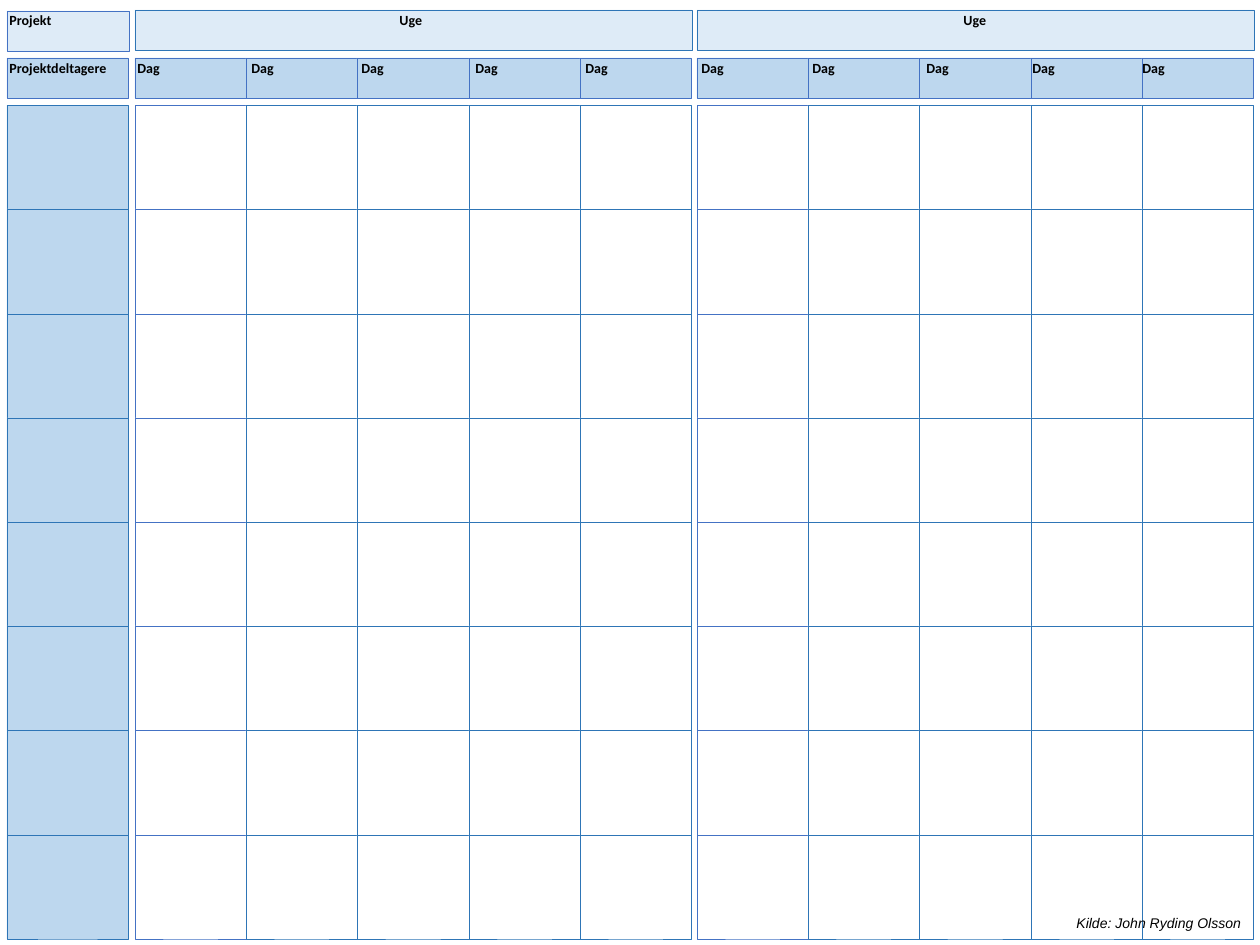
from lxml.etree import SubElement
from pptx import Presentation
from pptx.dml.color import RGBColor
from pptx.enum.shapes import MSO_SHAPE
from pptx.oxml.ns import qn
from pptx.util import Pt

SCALE = 914400 / 126  # EMU per px


def emu(*lengths):
    return [round(n * SCALE) for n in lengths]


def add_text(text, box, font="Calibri", bold=False, italic=False, tabs=()):
    sp = s.shapes.add_textbox(*emu(*box))
    tf = sp.text_frame
    tf.word_wrap = True
    tf.margin_right = 0
    p = tf.paragraphs[0]
    r = p.add_run()
    r.text = text
    r.font.size, r.font.name = Pt(8), font
    r.font.bold, r.font.italic = bold, italic
    r.font.color.rgb = RGBColor.from_string("000000")
    if tabs:
        tab_list = SubElement(p._p.get_or_add_pPr(), qn("a:tabLst"))
        for x in tabs:
            pos = emu(x - TEXT_X)[0]
            SubElement(tab_list, qn("a:tab"), pos=str(pos), algn="l")


prs = Presentation()
prs.slide_width, prs.slide_height = emu(1260, 945)
s = prs.slides.add_slide(prs.slide_layouts[6])

PALE, LIGHT, WHITE = "DEEBF7", "BDD7EE", "FFFFFF"
BLUE, DARK = "4472C4", "2E75B6"
TEXT_X = 10
HEAD_H = 40
DAY_TOP = 58
DAYS, ROWS = 5, 8
WEEK_W = 556
row_edges = [round(105 + i * 834 / ROWS) for i in range(ROWS + 1)]
rows = [(top, end - top) for top, end in zip(row_edges, row_edges[1:])]

# Project column: heading, participant heading, one cell per participant
cells = [(7, 11, 122, HEAD_H, PALE, BLUE),
         (7, DAY_TOP, 121, HEAD_H, LIGHT, BLUE)]
cells += [(7, top, 121, h, LIGHT, DARK) for top, h in rows]

# Two weeks: week heading, day headings and empty cells
for left in (135, 697):
    cells.append((left, 10, WEEK_W + 1, HEAD_H, PALE, DARK))
    edges = [left + round(i * WEEK_W / DAYS) for i in range(DAYS + 1)]
    for i, (x, end) in enumerate(zip(edges, edges[1:])):
        cells.append((x, DAY_TOP, end - x, HEAD_H, LIGHT, BLUE))
        line = DARK if i else BLUE
        cells += [(x, top, end - x, h, WHITE, line) for top, h in rows]

for x, y, w, h, fill, line in cells:
    sp = s.shapes.add_shape(MSO_SHAPE.RECTANGLE, *emu(x, y, w, h))
    sp.shadow.inherit = False
    sp.fill.solid()
    sp.fill.fore_color.rgb = RGBColor.from_string(fill)
    sp.line.color.rgb = RGBColor.from_string(line)
    sp.line.width = Pt(0.25)

# Heading rows, spaced with tab stops
add_text("Projekt\tUge\tUge", (-3, 5, 1005, 30), bold=True, tabs=(400, 964))
add_text("\t".join(["Projektdeltagere"] + ["Dag"] * 2 * DAYS),
         (-3, 53, 1196, 30), bold=True,
         tabs=(138, 252, 362, 476, 586, 702, 813, 927, 1033, 1143))

# Source
add_text("Kilde: John Ryding Olsson", (1064, 908, 193, 30),
         font="Arial", italic=True)

prs.save("out.pptx")
